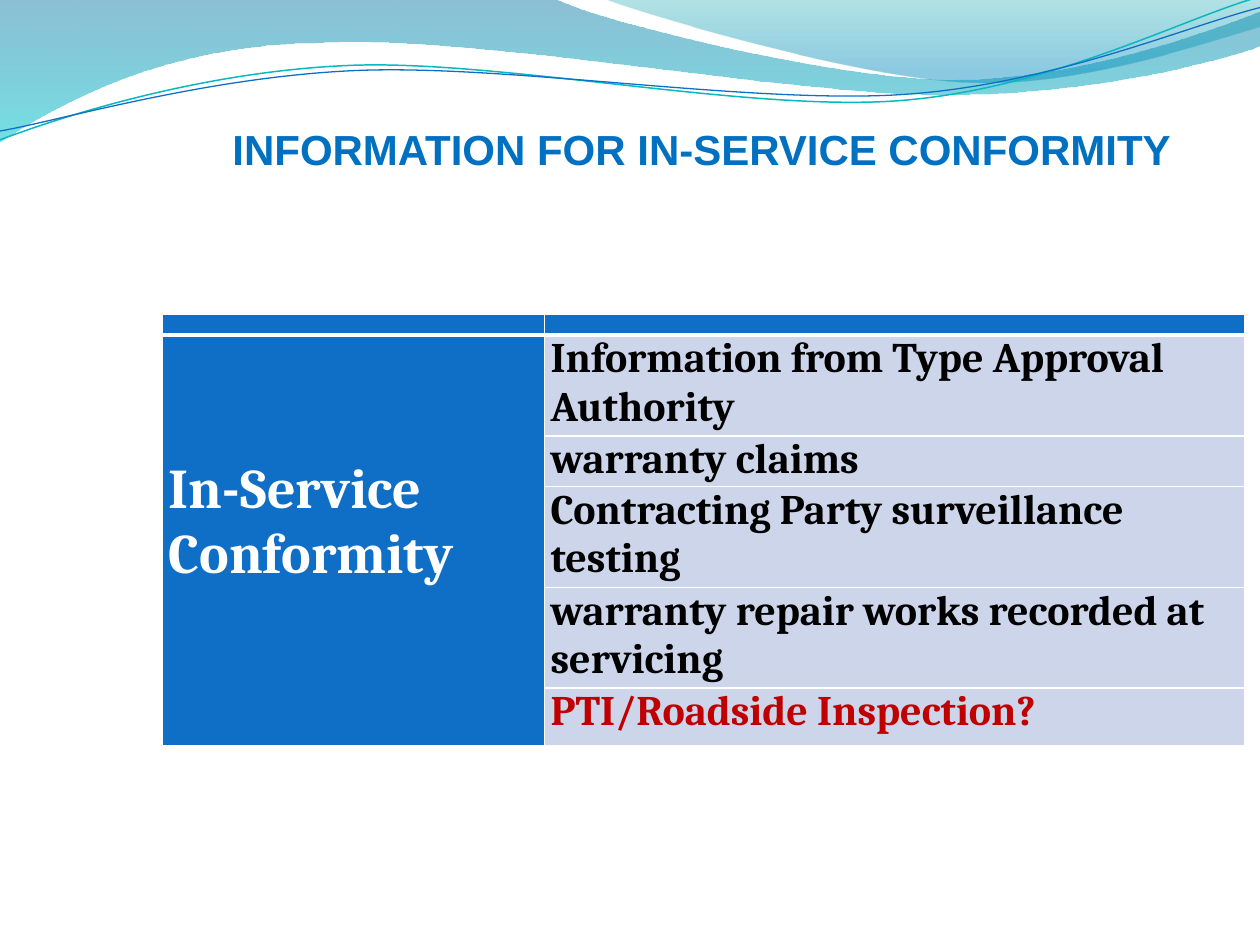
import pptx
import pptx.dml.color
import pptx.enum.text
import pptx.oxml
import pptx.oxml.ns
import pptx.util
from pptx.util import Inches

BLUE, PALE, WHITE = "0F6FC6", "CCD5EA", "FFFFFF"


def rgb(hex_color):
    return pptx.dml.color.RGBColor.from_string(hex_color)


def bend(path, segments):
    lines = iter(path.findall(pptx.oxml.ns.qn("a:lnTo")))
    for segment in segments:
        first = next(lines)
        if len(segment) == 6:
            first.tag = pptx.oxml.ns.qn("a:cubicBezTo")
            for _ in range(2):
                control = next(lines)
                first.append(control[0])
                path.remove(control)


class SlideBuilder:
    """Draws styled elements on the current slide."""

    def __init__(self, slide):
        self.slide = slide
        self.heading_font = "Arial"
        self.body_font = "Cambria"

    def outline(self, start, segments, close):
        points = [(int(Inches(segment[i])), int(Inches(segment[i + 1])))
                  for segment in [start] + segments for i in range(0, len(segment), 2)]
        builder = self.slide.shapes.build_freeform(*points[0])
        builder.add_line_segments(points[1:], close=close)
        shape = builder.convert_to_shape()
        bend(next(shape._element.iter(pptx.oxml.ns.qn("a:path"))), segments)
        shape.shadow.inherit = False
        return shape

    def wave(self, start, segments, stops):
        shape = self.outline(start, segments, True)
        shape.line.fill.background()
        shape.fill.gradient()
        shape.fill.gradient_angle = 270
        for stop, (position, color, _) in zip(shape.fill.gradient_stops, stops):
            stop.position = position
            stop.color.rgb = rgb(color)
        colors = shape._element.spPr.iter(pptx.oxml.ns.qn("a:srgbClr"))
        for color, (_, _, opacity) in zip(colors, stops):
            alpha = color.makeelement(pptx.oxml.ns.qn("a:alpha"), {"val": str(opacity * 1000)})
            color.append(alpha)

    def ribbon(self, start, segments, color, width):
        shape = self.outline(start, segments, False)
        shape.fill.background()
        shape.line.color.rgb = rgb(color)
        shape.line.width = pptx.util.Pt(width)

    def style(self, paragraph, font_name, size, color):
        font = paragraph.font
        font.name, font.size, font.bold = font_name, pptx.util.Pt(size), True
        font.color.rgb = rgb(color)

    def heading(self, text, left, top, width, height):
        box = self.slide.shapes.add_textbox(Inches(left), Inches(top), Inches(width), Inches(height))
        frame = box.text_frame
        frame.word_wrap = True
        frame.margin_top = Inches(0.38)
        paragraph = frame.paragraphs[0]
        paragraph.text = text
        paragraph.alignment = pptx.enum.text.PP_ALIGN.CENTER
        self.style(paragraph, self.heading_font, 24, "0070C0")

    def table(self, left, top, widths, heights):
        frame = self.slide.shapes.add_table(
            len(heights), len(widths), Inches(left), Inches(top),
            Inches(sum(widths)), Inches(sum(heights)))
        for column, width in zip(frame.table.columns, widths):
            column.width = Inches(width)
        for row, height in zip(frame.table.rows, heights):
            row.height = Inches(height)
        return frame.table

    def cell(self, cell, fill, text="", size=24, color=WHITE, bottom=1):
        cell.margin_left = cell.margin_right = Inches(0.05)
        cell.margin_top = cell.margin_bottom = 0
        properties = cell._tc.get_or_add_tcPr()
        for side, width in (("L", 1), ("R", 1), ("T", 1), ("B", bottom)):
            properties.append(pptx.oxml.parse_xml(
                f'<a:ln{side} {pptx.oxml.ns.nsdecls("a")} w="{width * 12700}"><a:solidFill>'
                f'<a:srgbClr val="{WHITE}"/></a:solidFill></a:ln{side}>'))
        cell.fill.solid()
        cell.fill.fore_color.rgb = rgb(fill)
        paragraph = cell.text_frame.paragraphs[0]
        if text:
            paragraph.text = text
            self.style(paragraph, self.body_font, size, color)
        else:
            paragraph._p.append(pptx.oxml.parse_xml(
                f'<a:endParaRPr {pptx.oxml.ns.nsdecls("a")} sz="{size * 100}"/>'))


def main():
    presentation = pptx.Presentation()
    presentation.slide_width, presentation.slide_height = Inches(10), Inches(7.5)
    builder = SlideBuilder(presentation.slides.add_slide(presentation.slide_layouts[6]))

    builder.wave((0, -0.01), [
        (4.4, -0.01),
        (4.76, 0.17, 6.64, 0.63, 7.58, 0.63), (8.53, 0.63, 9.58, 0.26, 10, 0.09),
        (10.01, 0.36),
        (9.83, 0.44, 8.7, 0.76, 7.46, 0.75), (6.22, 0.75, 3.82, 0.28, 2.57, 0.34),
        (1.29, 0.35, 0.46, 0.83, -0.01, 1.13),
    ], [(0, "0074A1", 45), (1, "00C6CF", 55)])
    builder.wave((4.79, -0.01), [
        (5.09, 0.11, 6.82, 0.62, 7.69, 0.65), (8.56, 0.69, 9.61, 0.32, 10, 0.21),
        (10, 0),
    ], [(0, "00A1A9", 30), (0.8, "008BBF", 45)])
    builder.ribbon((0, 1.11), [
        (0.48, 0.93, 1.58, 0.57, 2.77, 0.52), (3.95, 0.47, 5.93, 0.89, 7.13, 0.8),
        (8.33, 0.71, 9.38, 0.15, 9.98, -0.02)], "0AB8BF", 0.85)
    builder.ribbon((0, 1.04), [
        (0.47, 0.96, 1.64, 0.61, 2.83, 0.56), (4.03, 0.51, 5.97, 0.83, 7.17, 0.75),
        (8.36, 0.67, 9.41, 0.21, 10, 0.06)], BLUE, 0.75)

    builder.heading("INFORMATION FOR IN-SERVICE CONFORMITY", 1.14, 0.6, 8.86, 1.04)

    sources = [
        ("Information from Type Approval Authority", "000000", 0.8),
        ("warranty claims", "000000", 0.4),
        ("Contracting Party surveillance testing", "000000", 0.8),
        ("warranty repair works recorded at servicing", "000000", 0.8),
        ("PTI/Roadside Inspection?", "C00000", 0.46),
    ]
    table = builder.table(1.29, 2.49, [3.03, 5.56], [0.17] + [height for _, _, height in sources])
    for column in range(2):
        builder.cell(table.cell(0, column), BLUE, size=8, bottom=3)
    topic = table.cell(1, 0)
    topic.merge(table.cell(len(sources), 0))
    builder.cell(topic, BLUE, "In-Service Conformity", size=32)
    topic.vertical_anchor = pptx.enum.text.MSO_ANCHOR.MIDDLE
    topic.margin_bottom = Inches(0.28)
    for row, (text, color, _) in enumerate(sources, start=1):
        builder.cell(table.cell(row, 1), PALE, text, color=color)

    presentation.save("out.pptx")


if __name__ == "__main__":
    main()
